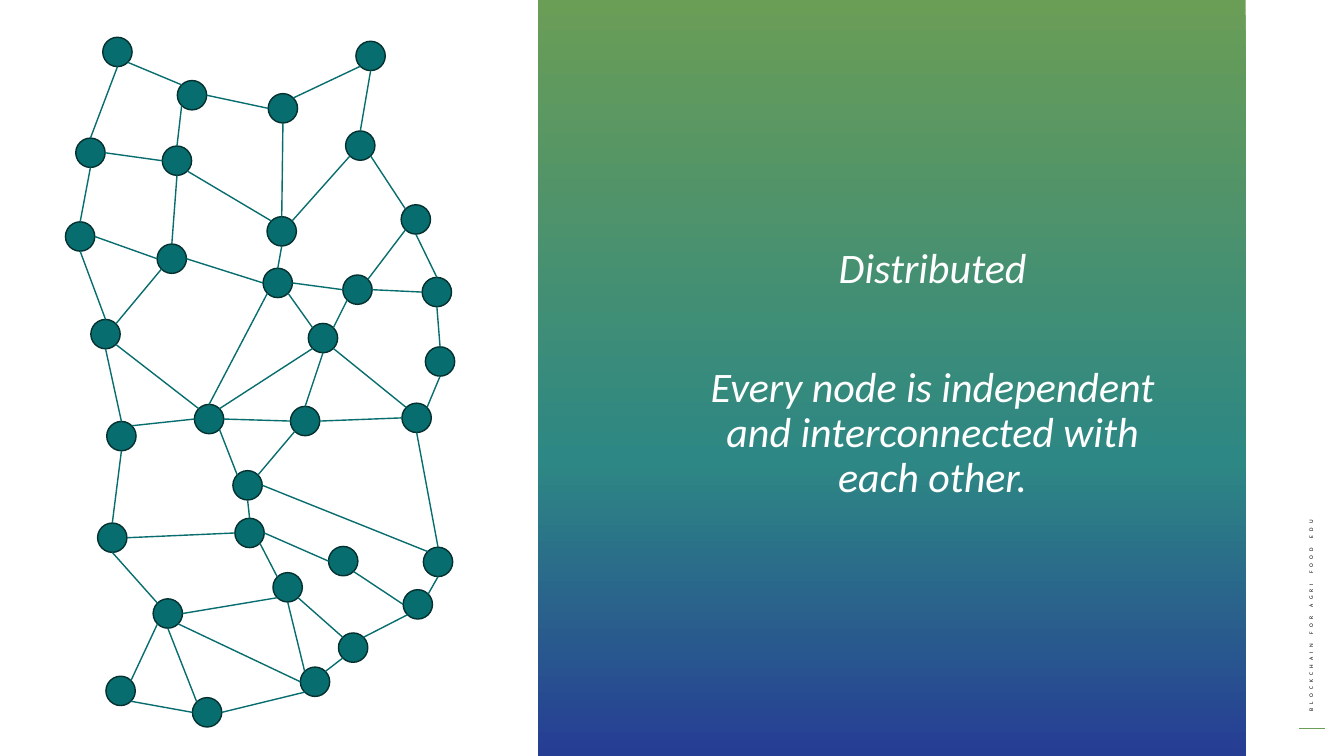
from copy import deepcopy
from math import cos, radians, sin

from lxml import etree
from pptx import Presentation
from pptx.dml.color import RGBColor
from pptx.enum.shapes import MSO_CONNECTOR, MSO_SHAPE
from pptx.enum.text import MSO_ANCHOR, MSO_AUTO_SIZE, PP_ALIGN
from pptx.oxml.ns import qn
from pptx.util import Cm, Pt

STRAIGHT = MSO_CONNECTOR.STRAIGHT
RECTANGLE, OVAL = MSO_SHAPE.RECTANGLE, MSO_SHAPE.OVAL
CENTER, MIDDLE, NO_FIT = PP_ALIGN.CENTER, MSO_ANCHOR.MIDDLE, MSO_AUTO_SIZE.NONE

GREEN = RGBColor(0x6A, 0x9D, 0x56)
TEAL = RGBColor(0x2D, 0x87, 0x84)
BLUE = RGBColor(0x26, 0x3D, 0x94)
NODE_FILL = RGBColor(0x08, 0x6D, 0x6E)
NODE_EDGE = RGBColor(0x04, 0x30, 0x30)
WHITE = RGBColor(0xFF, 0xFF, 0xFF)
BLACK = RGBColor(0x01, 0x01, 0x01)

FONT = "Calibri"
SIDE_LABEL = "BLOCKCHAIN FOR AGRI FOOD EDU"
MESSAGE = [  # text, space before in points
    ("Distributed", 10),
    ("Every node is independent and interconnected with each other.", 52.5),
]
PANEL_STOPS = [(0, GREEN), (0.61, TEAL), (1, BLUE)]

# Left and top of every node in centimetres; links refer to the list index.
NODE_SIZE = 0.74
NODES = [
    (7.57, 16.81), (8.53, 15.95), (8.28, 13.77), (4.85, 17.58), (2.67, 17.04),
    (3.86, 15.09), (6.88, 14.43), (10.16, 14.86), (10.67, 13.79), (5.92, 13.06),
    (2.46, 13.18), (5.87, 11.86), (7.32, 10.24), (10.13, 10.16), (4.9, 10.19),
    (2.69, 10.62), (10.72, 8.74), (7.77, 8.15), (8.64, 6.93), (6.63, 6.76),
    (3.96, 6.15), (2.29, 8.05), (1.65, 5.59), (10.11, 5.16), (10.64, 6.99),
    (6.73, 5.46), (4.09, 3.68), (1.91, 3.48), (2.59, 0.94), (4.47, 2.03),
    (6.76, 2.36), (8.71, 3.3), (8.97, 1.04),
]

# Each link: node, compass side it leaves from, node, side it arrives at.
LINKS = [
    (32, "S", 31, "N"), (32, "SW", 30, "NE"), (30, "S", 25, "N"),
    (31, "SW", 25, "NE"), (31, "SE", 23, "NW"), (29, "E", 30, "W"),
    (28, "SE", 29, "NW"), (27, "N", 28, "S"), (26, "N", 29, "SW"),
    (26, "SE", 25, "NW"), (27, "E", 26, "W"), (27, "S", 22, "N"),
    (26, "S", 20, "N"), (22, "E", 20, "W"), (20, "E", 19, "W"),
    (19, "N", 25, "S"), (18, "NE", 23, "SW"), (24, "N", 23, "S"),
    (18, "E", 24, "W"), (19, "E", 18, "W"), (22, "S", 21, "N"),
    (21, "NE", 20, "SW"), (15, "N", 21, "S"), (21, "SE", 14, "NW"),
    (14, "N", 19, "SW"), (14, "NE", 17, "SW"), (19, "SE", 17, "NW"),
    (17, "NE", 18, "SW"), (16, "N", 24, "S"), (17, "SE", 13, "NW"),
    (13, "NE", 16, "S"), (12, "N", 17, "S"), (13, "W", 12, "E"),
    (14, "E", 12, "W"), (11, "NW", 14, "SE"), (14, "W", 15, "NE"),
    (10, "N", 15, "S"), (10, "E", 9, "W"), (9, "N", 11, "S"),
    (11, "NE", 12, "SW"), (8, "N", 13, "S"), (11, "E", 8, "NW"),
    (9, "E", 2, "W"), (9, "SE", 6, "NW"), (5, "NW", 10, "S"),
    (5, "E", 6, "SW"), (0, "NW", 6, "S"), (6, "SE", 1, "NW"),
    (7, "NE", 8, "S"), (2, "SE", 7, "W"), (1, "NE", 7, "SW"),
    (0, "NE", 1, "SW"), (0, "W", 5, "SE"), (3, "NW", 5, "S"),
    (0, "SW", 3, "E"), (5, "SW", 4, "NE"), (3, "W", 4, "SE"),
]
SIDES = ["E", "SE", "S", "SW", "W", "NW", "N", "NE"]  # clockwise, 45° apart


def set_values(target, values):
    for name, value in values.items():
        setattr(target, name, value)


def format_span(span, size, color, **extra):
    set_values(span.font, {"name": FONT, "size": Pt(size), **extra})
    span.font.color.rgb = color


def place(shape, left, top, width, height):
    set_values(shape, {"left": Cm(left), "top": Cm(top),
                       "width": Cm(width), "height": Cm(height)})


def rim_point(node, side):
    """Return the point in centimetres on a node's rim at a compass side."""
    angle = radians(45 * SIDES.index(side))
    radius = NODE_SIZE / 2
    left, top = NODES[node]
    return left + radius * (1 + cos(angle)), top + radius * (1 + sin(angle))


def add_line(shapes, start, end, color, width):
    line = shapes.add_connector(STRAIGHT, *map(Cm, (*start, *end)))
    line.line.color.rgb = color
    line.line.width = Pt(width)
    etree.SubElement(line._element.spPr, qn("a:effectLst"))


def add_panel(slide):
    panel = slide.shapes.add_shape(RECTANGLE, Cm(13.56), 0, Cm(17.83), Cm(19.05))
    panel.shadow.inherit = False
    panel.line.fill.background()
    panel.fill.gradient()
    panel.fill.gradient_angle = 270
    stop_list = panel._element.spPr.find(".//" + qn("a:gsLst"))
    stop_list.append(deepcopy(stop_list[0]))
    for stop, (position, color) in zip(panel.fill.gradient_stops, PANEL_STOPS):
        stop.position = position
        stop.color.rgb = color
    slide.shapes._spTree.insert(2, panel._element)  # behind the message


def add_side_label(slide):
    add_line(slide.shapes, (33.38, 18.36), (32.74, 18.36), GREEN, 0.75)
    box = slide.shapes.add_textbox(Cm(29.31), Cm(14.22), Cm(7.47), Cm(0.43))
    box.rotation = 270
    box.text_frame.word_wrap = True
    span = box.text_frame.paragraphs[0].add_run()
    span.text = SIDE_LABEL
    format_span(span, 4, BLACK)
    span.font._element.set("spc", "300")


def fill_message(slide):
    body = slide.placeholders[2]
    for placeholder in list(slide.placeholders):
        if placeholder.placeholder_format.idx != 2:
            placeholder._element.getparent().remove(placeholder._element)
    place(body, 16.94, 1.65, 13.13, 15.57)
    frame = body.text_frame
    set_values(frame, {"word_wrap": True, "vertical_anchor": MIDDLE,
                       "auto_size": NO_FIT})
    for index, (text, space) in enumerate(MESSAGE):
        para = frame.add_paragraph() if index else frame.paragraphs[0]
        set_values(para, {"alignment": CENTER, "line_spacing": 0.9,
                          "space_before": Pt(space)})
        span = para.add_run()
        span.text = text
        format_span(span, 30, WHITE, italic=True)


def add_network(slide):
    network = slide.shapes.add_group_shape()
    for left, top in NODES:
        node = network.shapes.add_shape(
            OVAL, *map(Cm, (left, top, NODE_SIZE, NODE_SIZE)))
        node.shadow.inherit = False
        node.fill.solid()
        node.fill.fore_color.rgb = NODE_FILL
        node.line.color.rgb = NODE_EDGE
        node.line.width = Pt(1)
    for start, start_side, end, end_side in LINKS:
        add_line(network.shapes, rim_point(start, start_side),
                 rim_point(end, end_side), NODE_FILL, 1)


def main():
    deck = Presentation()
    set_values(deck, {"slide_width": Cm(33.87), "slide_height": Cm(19.05)})
    slide = deck.slides.add_slide(deck.slide_layouts.get_by_name("Content with Caption"))
    fill_message(slide)
    add_panel(slide)
    add_side_label(slide)
    add_network(slide)
    deck.save("out.pptx")


if __name__ == "__main__":
    main()
